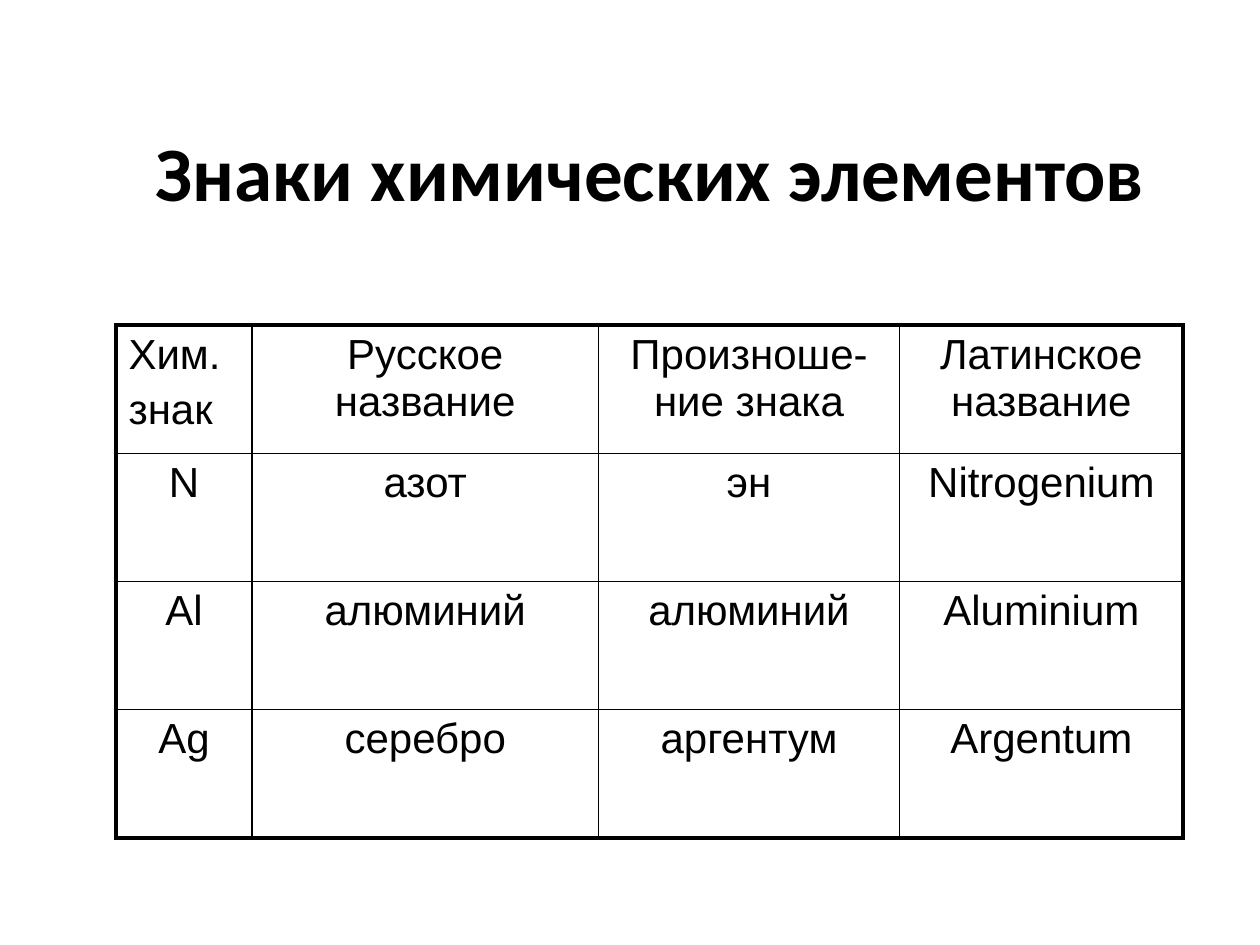
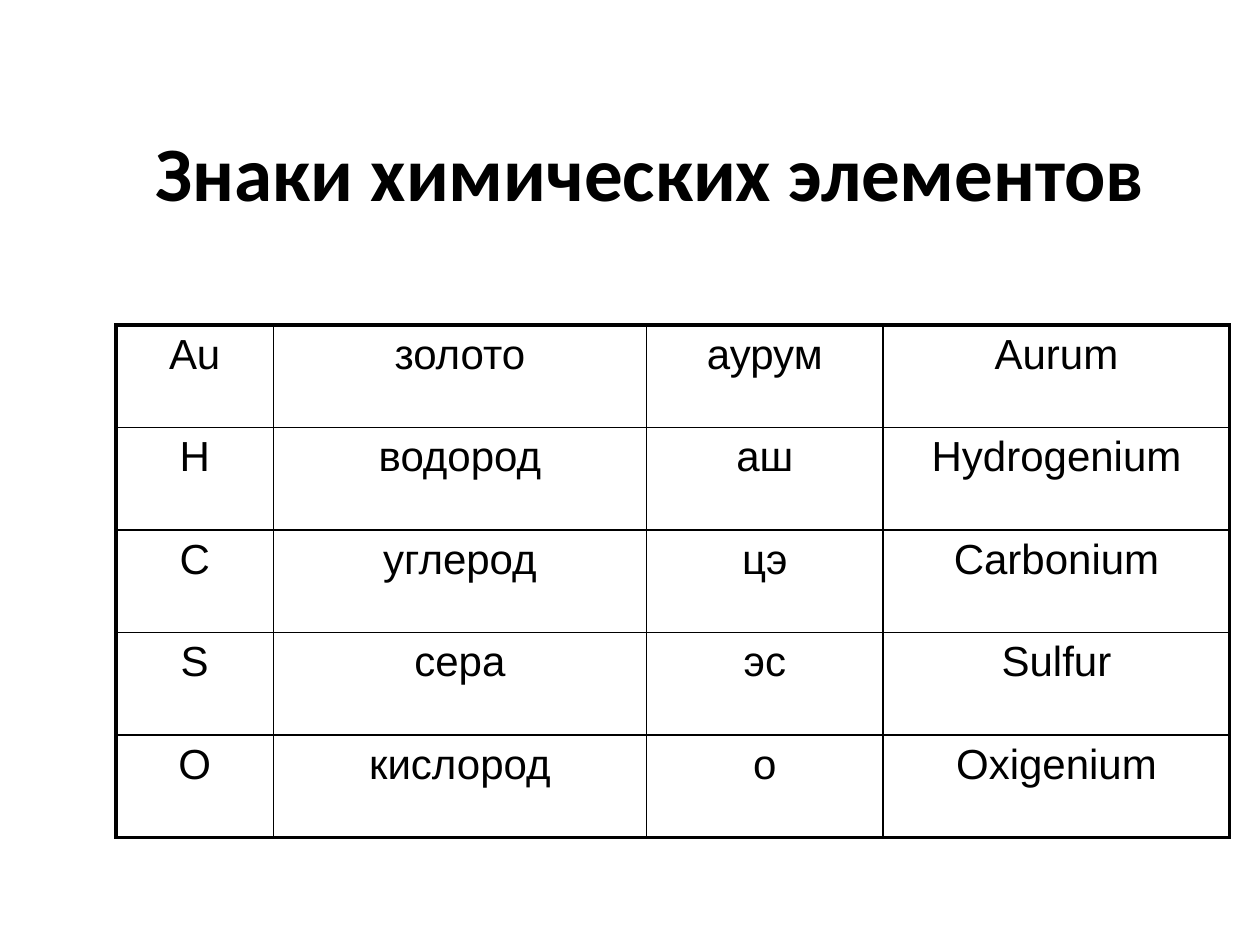
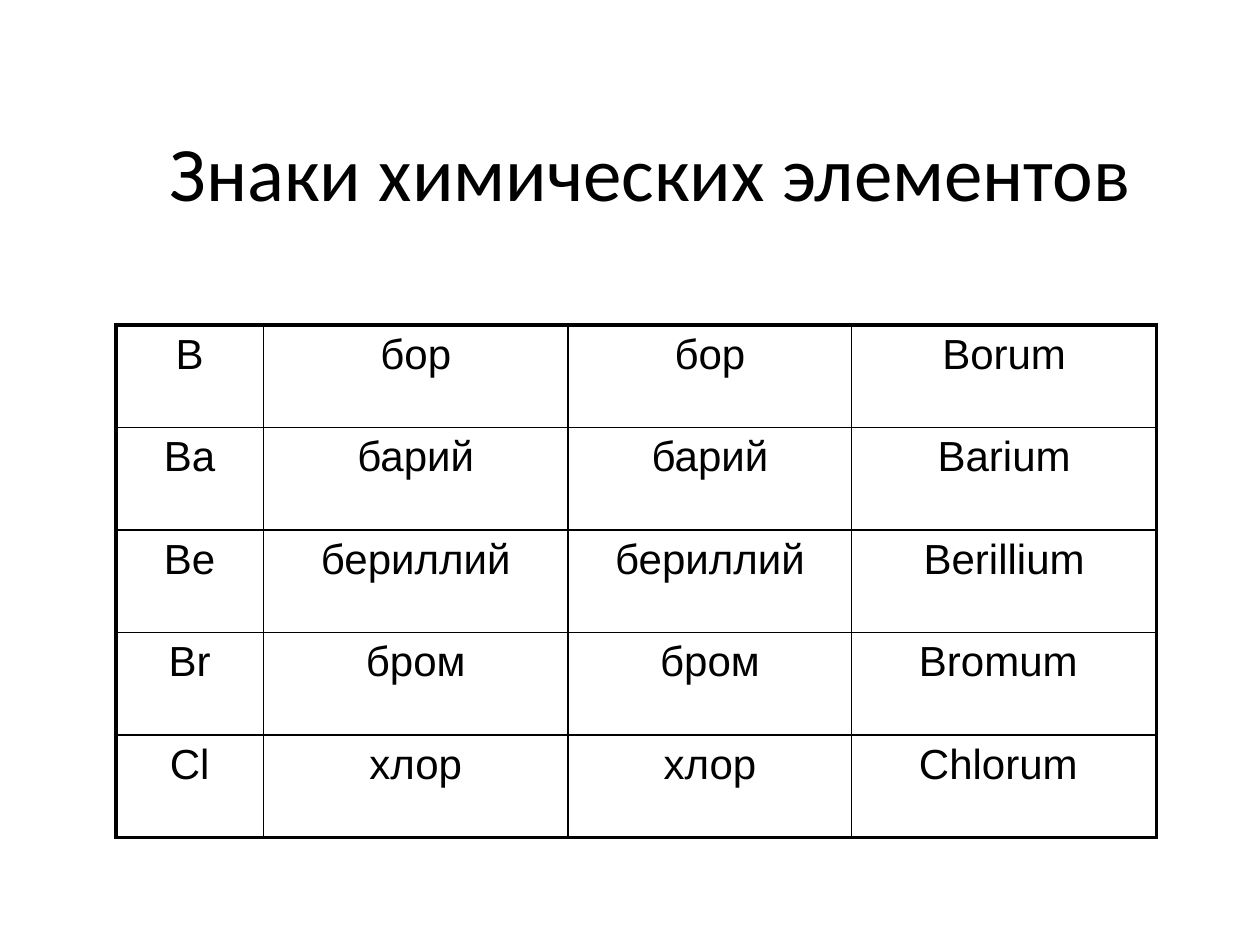
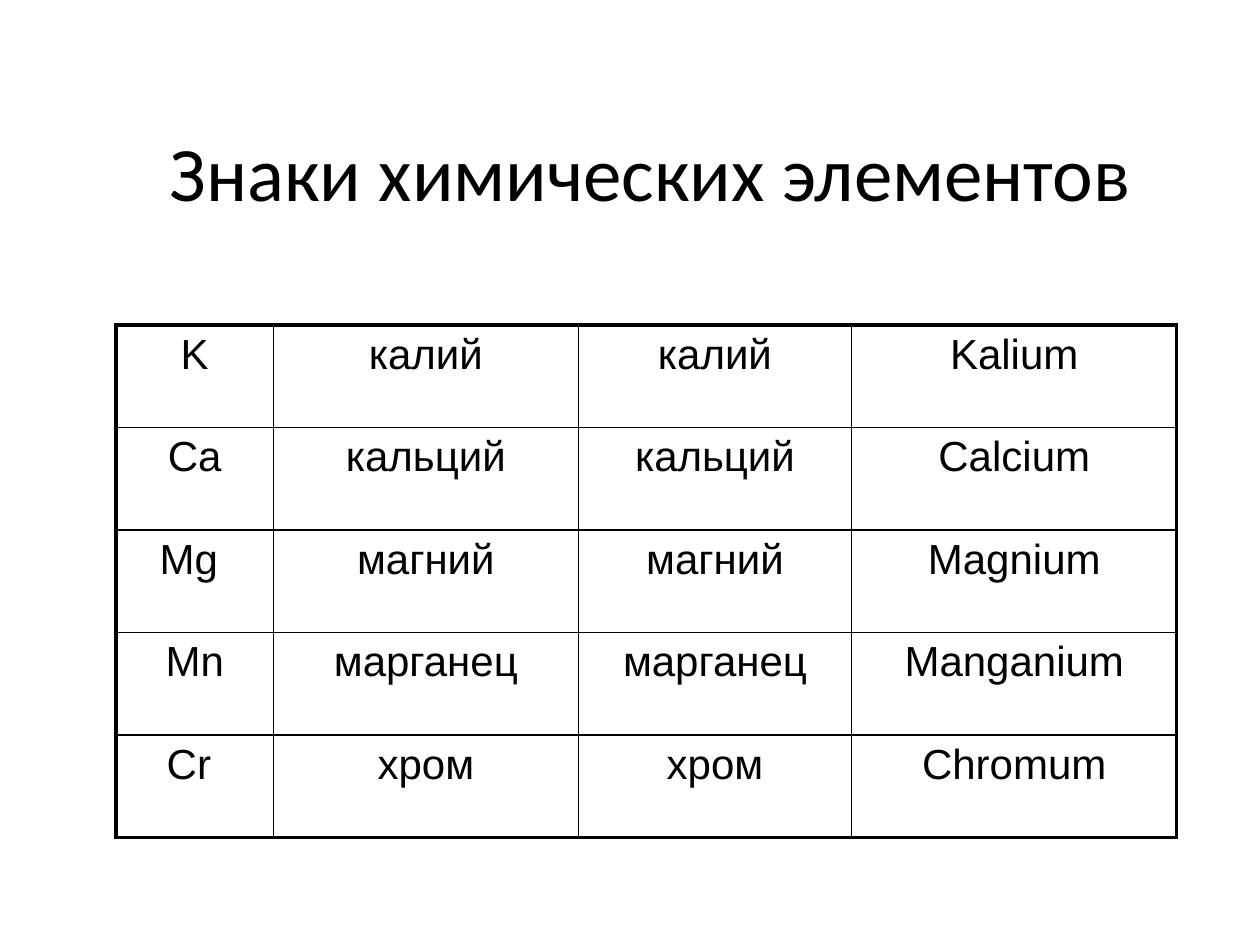
from lxml import etree
from pptx import Presentation
from pptx.dml.color import RGBColor
from pptx.enum import shapes, text
from pptx.oxml import ns
from pptx.util import Inches, Pt

BLACK = RGBColor(0x00, 0x00, 0x00)
TITLE = "Знаки химических элементов"
TITLE_BOX = (0.83, 0.83, 8.67, 1.25)
TABLE_LEFT, TABLE_TOP, TABLE_HEIGHT = 0.92, 2.58, 4.07
OUTER, INNER = 2.25, 1

# Each slide: bold title, column widths, rows of cells
SLIDES = [
    (True, (1.08, 2.75, 2.39, 2.25), [
        ("Хим.\nзнак", "Русское название", "Произноше-ние знака", "Латинское название"),
        ("N", "азот", "эн", "Nitrogenium"),
        ("Al", "алюминий", "алюминий", "Aluminium"),
        ("Ag", "серебро", "аргентум", "Argentum"),
    ]),
    (True, (1.25, 2.96, 1.88, 2.75), [
        ("Аu", "золото", "аурум", "Aurum"),
        ("H", "водород", "аш", "Hydrogenium"),
        ("C", "углерод", "цэ", "Carbonium"),
        ("S", "сера", "эс", "Sulfur"),
        ("O", "кислород", "о", "Oxigenium"),
    ]),
    (False, (1.17, 2.42, 2.25, 2.42), [
        ("B", "бор", "бор", "Borum"),
        ("Ba", "барий", "барий", "Barium"),
        ("Be", "бериллий", "бериллий", "Berillium"),
        ("Br", "бром", "бром", "Bromum "),
        ("Cl", "хлор", "хлор", "Chlorum "),
    ]),
    (False, (1.25, 2.42, 2.17, 2.58), [
        ("K", "калий", "калий", "Kalium"),
        ("Ca", "кальций", "кальций", "Calcium"),
        ("Mg ", "магний", "магний", "Magnium"),
        ("Mn", "марганец", "марганец", "Manganium"),
        ("Cr ", "хром", "хром", "Chromum"),
    ]),
]


def add_run(p, words, font, size, bold=False):
    r = p.add_run()
    r.text = words
    r.font.name, r.font.size, r.font.bold = font, Pt(size), bold
    r.font.color.rgb = BLACK


def add_title(slide, box, bold):
    sp = slide.shapes.add_shape(shapes.MSO_SHAPE.ROUNDED_RECTANGLE,
                                *[Inches(v) for v in box])
    sp.adjustments[0] = 0.22
    sp.shadow.inherit = False
    sp.fill.background()
    sp.line.fill.background()
    tf = sp.text_frame
    tf.word_wrap = True
    tf.vertical_anchor = text.MSO_ANCHOR.TOP
    tf.margin_top = Inches(0.08)
    p = tf.paragraphs[0]
    p.alignment = text.PP_ALIGN.CENTER
    add_run(p, TITLE, "Calibri", 44, bold)


def set_borders(cell, widths):
    """Draw the left, right, top and bottom borders, widths in points."""
    tcPr = cell._tc.get_or_add_tcPr()
    for side, width in zip("LRTB", widths):
        ln = etree.SubElement(tcPr, ns.qn(f"a:ln{side}"), w=str(Pt(width)))
        fill = etree.SubElement(ln, ns.qn("a:solidFill"))
        etree.SubElement(fill, ns.qn("a:srgbClr"), val=str(BLACK))


def fill_cell(cell, words):
    lines = words.split("\n")
    tf = cell.text_frame
    for i, line in enumerate(lines):
        p = tf.add_paragraph() if i else tf.paragraphs[0]
        if i:
            p.space_before = Pt(4.8)
        p.alignment = text.PP_ALIGN.LEFT if len(lines) > 1 else text.PP_ALIGN.CENTER
        add_run(p, line, "Arial", 24)


def add_element_table(slide, left, top, height, widths, rows):
    n_rows, n_cols = len(rows), len(widths)
    table = slide.shapes.add_table(n_rows, n_cols, Inches(left), Inches(top),
                                   Inches(sum(widths)), Inches(height)).table
    table.first_row = table.horz_banding = False
    for col, width in zip(table.columns, widths):
        col.width = Inches(width)
    for i, row in enumerate(rows):
        table.rows[i].height = Inches(height / n_rows)
        for j, words in enumerate(row):
            cell = table.cell(i, j)
            fill_cell(cell, words)
            at_edge = (j == 0, j == n_cols - 1, i == 0, i == n_rows - 1)
            set_borders(cell, [OUTER if edge else INNER for edge in at_edge])
            cell.fill.background()


def main():
    prs = Presentation()
    prs.slide_width, prs.slide_height = Inches(10), Inches(7.5)
    for bold, widths, rows in SLIDES:
        slide = prs.slides.add_slide(prs.slide_layouts[6])
        add_title(slide, TITLE_BOX, bold)
        add_element_table(slide, TABLE_LEFT, TABLE_TOP, TABLE_HEIGHT, widths, rows)
    prs.save("out.pptx")


if __name__ == "__main__":
    main()
